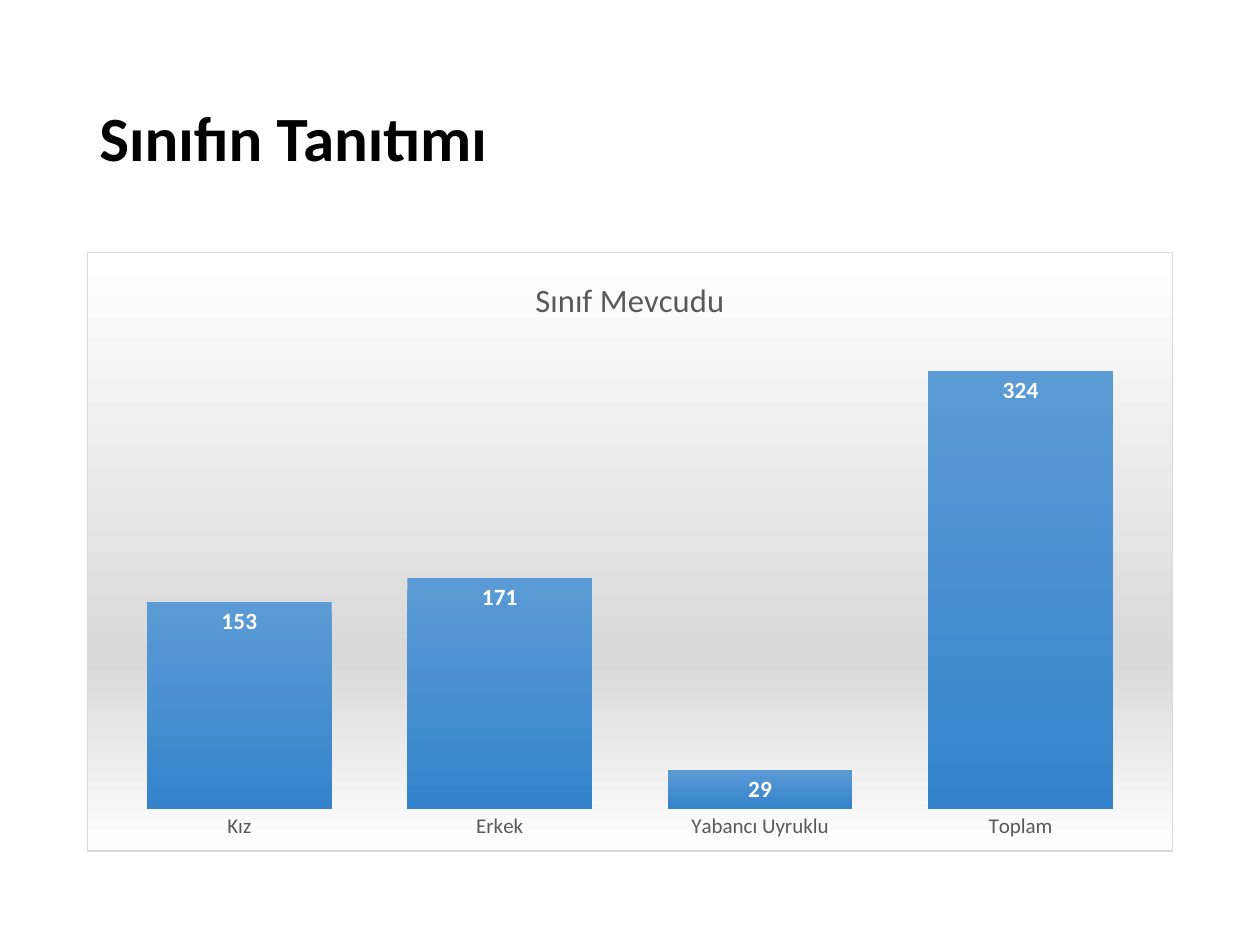
import pptx
import pptx.chart.data
import pptx.dml.color
import pptx.enum.chart
import pptx.enum.text
import pptx.oxml
import pptx.oxml.ns
import pptx.util

Cm = pptx.util.Cm
Pt = pptx.util.Pt
RGBColor = pptx.dml.color.RGBColor

BLACK = RGBColor(0x00, 0x00, 0x00)
WHITE = RGBColor(0xFF, 0xFF, 0xFF)
GREY_TEXT = RGBColor(0x59, 0x59, 0x59)
GREY_LIGHT = RGBColor(0xD9, 0xD9, 0xD9)
BLUE_TOP = RGBColor(0x5B, 0x9B, 0xD5)
BLUE_BOTTOM = RGBColor(0x34, 0x83, 0xCB)

LEFT, WIDTH = Cm(1.75), Cm(21.9)
NAMESPACES = pptx.oxml.ns.nsdecls("c", "a")


class ClassSlide:
    font_name = "Calibri"

    def __init__(self, presentation):
        self.slide = presentation.slides.add_slide(presentation.slide_layouts[5])

    def style_font(self, font, size, color, bold=False):
        font.name = self.font_name
        font.size = Pt(size)
        font.bold = bold
        font.color.rgb = color

    def add_title(self, text):
        heading = self.slide.shapes.title
        heading.left, heading.top = LEFT, Cm(1.01)
        heading.width, heading.height = WIDTH, Cm(3.68)
        frame = heading.text_frame
        frame.word_wrap = True
        frame.vertical_anchor = pptx.enum.text.MSO_ANCHOR.MIDDLE
        paragraph = frame.paragraphs[0]
        paragraph.alignment = pptx.enum.text.PP_ALIGN.LEFT
        paragraph.line_spacing = 0.9
        run = paragraph.add_run()
        run.text = text
        self.style_font(run.font, 36, BLACK, bold=True)

    def add_column_chart(self, title, counts):
        data = pptx.chart.data.CategoryChartData()
        data.categories = list(counts)
        data.add_series("Series 1", list(counts.values()))
        chart = self.slide.shapes.add_chart(
            pptx.enum.chart.XL_CHART_TYPE.COLUMN_CLUSTERED,
            LEFT, Cm(5.08), WIDTH, Cm(12.09), data).chart
        self.style_font(chart.font, 10, BLACK)
        chart.has_legend = False

        chart.has_title = True
        chart.chart_title.include_in_layout = False
        run = chart.chart_title.text_frame.paragraphs[0].add_run()
        run.text = title
        self.style_font(run.font, 18.6, GREY_TEXT)

        self.style_axes(chart)
        self.style_columns(chart.plots[0])
        self.style_background(chart)
        self.place_plot(chart, x=0.02, y=0.14, w=0.96, h=0.79)

    def style_axes(self, chart):
        categories = chart.category_axis
        categories.major_tick_mark = pptx.enum.chart.XL_TICK_MARK.NONE
        categories.format.line.fill.background()
        self.style_font(categories.tick_labels.font, 12, GREY_TEXT)
        values = chart.value_axis
        values.visible = False
        values.has_major_gridlines = False
        values.minimum_scale, values.maximum_scale = 0, 350

    def style_columns(self, plot):
        plot.gap_width = 41
        plot.vary_by_categories = False
        fill = plot.series[0].format.fill
        fill.gradient()
        fill.gradient_angle = 270
        for stop, position, color in zip(
                fill.gradient_stops, (0, 1), (BLUE_TOP, BLUE_BOTTOM)):
            stop.position = position
            stop.color.rgb = color
        labels = plot.series[0].data_labels
        labels.show_value = True
        labels.position = pptx.enum.chart.XL_LABEL_POSITION.INSIDE_END
        self.style_font(labels.font, 13.3, WHITE, bold=True)

    def style_background(self, chart):
        """Give the chart area a three-stop vertical gradient and a thin border."""
        stops = "".join(
            f'<a:gs pos="{percent * 1000}"><a:srgbClr val="{color}"/></a:gs>'
            for percent, color in ((0, WHITE), (68, GREY_LIGHT), (100, WHITE)))
        area = pptx.oxml.parse_xml(
            f'<c:spPr {NAMESPACES}><a:gradFill><a:gsLst>{stops}</a:gsLst>'
            f'<a:lin ang="5400000" scaled="0"/></a:gradFill>'
            f'<a:ln w="{Pt(0.75)}"><a:solidFill><a:srgbClr val="{GREY_LIGHT}"/>'
            f'</a:solidFill></a:ln></c:spPr>')
        chart.element.find(pptx.oxml.ns.qn("c:chart")).addnext(area)

    def place_plot(self, chart, **fractions):
        """Fix the inner plot area as fractions of the chart area."""
        sizes = "".join(f'<c:{side} val="{fraction}"/>'
                        for side, fraction in fractions.items())
        layout = pptx.oxml.parse_xml(
            f'<c:layout {NAMESPACES}><c:manualLayout><c:layoutTarget val="inner"/>'
            f'<c:xMode val="edge"/><c:yMode val="edge"/>{sizes}'
            f'</c:manualLayout></c:layout>')
        plot_area = chart.element.find(".//" + pptx.oxml.ns.qn("c:plotArea"))
        for automatic in plot_area.findall(pptx.oxml.ns.qn("c:layout")):
            plot_area.remove(automatic)
        plot_area.insert(0, layout)


def main():
    presentation = pptx.Presentation()
    presentation.slide_width, presentation.slide_height = Cm(25.4), Cm(19.05)
    page = ClassSlide(presentation)
    page.add_title("Sınıfın Tanıtımı")
    page.add_column_chart("Sınıf Mevcudu", {
        "Kız": 153, "Erkek": 171, "Yabancı Uyruklu": 29, "Toplam": 324})
    presentation.save("out.pptx")


if __name__ == "__main__":
    main()
